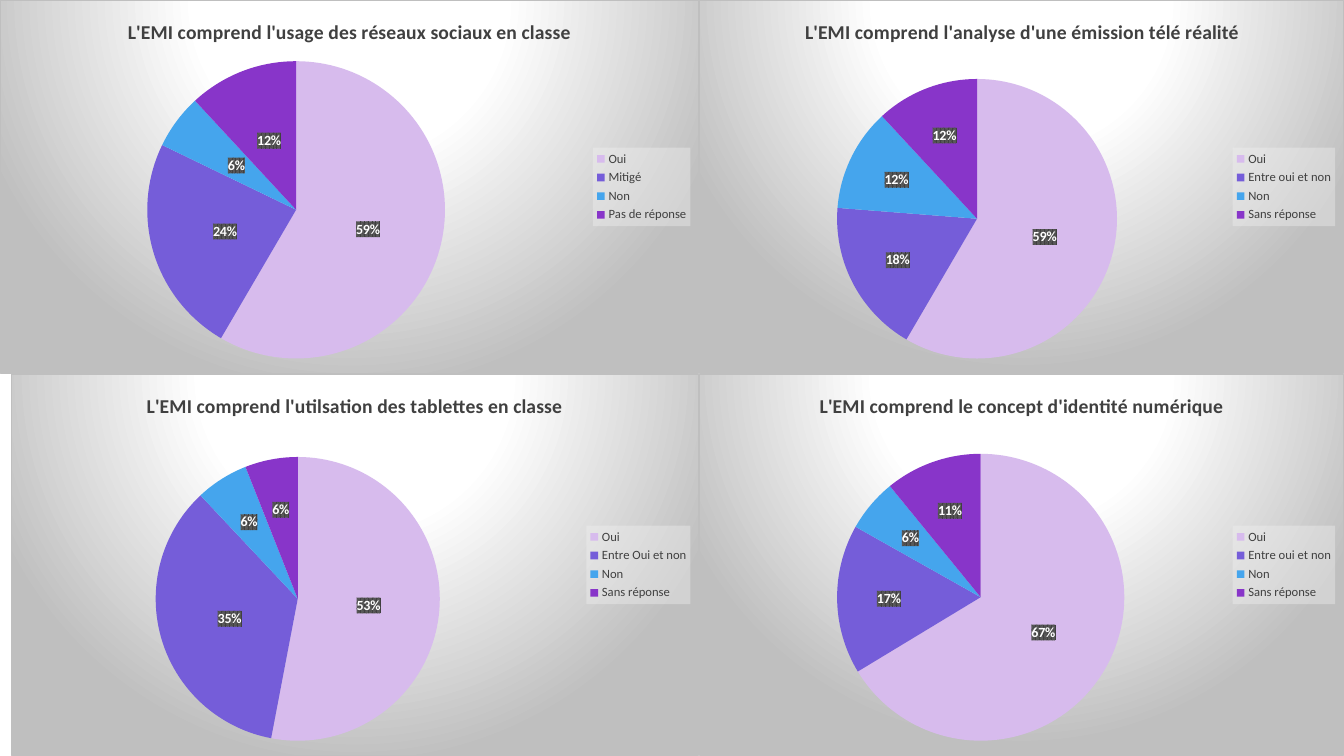
from dataclasses import dataclass
from math import cos, pi, sin
from typing import Any

from pptx import Presentation
from pptx import util as u
from pptx.chart import data as cd
from pptx.dml import color as col
from pptx.enum import chart as ch
from pptx.oxml import ns, parse_xml

PX = 9525
WIDE, HIGH = 1280, 720
LEFT, TOP = 666, 356


@dataclass(frozen=True)
class Theme:
    font: str = "Calibri"
    ink: str = "404040"
    edge: str = "BFBFBF"
    white: str = "FFFFFF"
    panel: str = "F2F2F2"
    weave: str = "595959"
    slices: tuple = ("D7BBED", "755DD9", "45A5ED", "8835C9")
    title: int = 14
    label: int = 10
    legend: int = 9


def style(font, theme, size, color, bold=False):
    font.name, font.size, font.bold = theme.font, u.Pt(size), bold
    font.color.rgb = col.RGBColor.from_string(color)


def write(frame, words, **form):
    frame.text = words
    style(frame.paragraphs[0].runs[0].font, **form)


def node(tag, inner):
    return parse_xml(f'<c:{tag} {ns.nsdecls("c", "a")}>{inner}</c:{tag}>')


def layout(**parts):
    inner = "".join(f'<c:{key} val="{val}"/>' for key, val in parts.items())
    return f"<c:layout><c:manualLayout>{inner}</c:manualLayout></c:layout>"


def place(parent, index, **parts):
    for old in parent.findall(ns.qn("c:layout")):
        parent.remove(old)
    parent.insert(index, parse_xml(layout(**parts).replace(
        "<c:layout>", f'<c:layout {ns.nsdecls("c")}>', 1)))


def paint(parent, inner):
    parent.find(ns.qn("c:txPr")).addprevious(node("spPr", inner))


def solid(color, alpha=100):
    return (f'<a:solidFill><a:srgbClr val="{color}"><a:alpha val="{alpha * 1000}"/>'
            '</a:srgbClr></a:solidFill>')


@dataclass
class Board:
    """Draws pie panels on one slide in a shared theme."""
    slide: Any
    theme: Theme

    def pie(self, box, title, start, disc, names, shares, moved):
        left, top, wide, high = box
        source = cd.CategoryChartData()
        source.categories = names
        source.add_series("Series 1", shares)
        chart = self.slide.shapes.add_chart(
            ch.XL_CHART_TYPE.PIE, *(n * PX for n in box), source).chart
        style(chart.font, self.theme, self.theme.label, "000000")
        self.panel(chart)
        self.title(chart, title, start / wide, 14 / high)
        self.legend(chart)
        x, y, size = disc
        area = chart._chartSpace.find(".//" + ns.qn("c:plotArea"))
        place(area, 0, layoutTarget="inner", xMode="edge", yMode="edge",
              x=x / wide, y=y / high, w=size / wide, h=size / high)
        plot = chart.plots[0]
        plot.vary_by_categories = True
        series = plot.series[0]
        for index, color in enumerate(self.theme.slices):
            form = series.points[index].format
            form.fill.solid()
            form.fill.fore_color.rgb = col.RGBColor.from_string(color)
            form.line.fill.background()
        self.labels(series, shares, moved, size / wide, size / high)

    def panel(self, chart):
        space, t = chart._chartSpace, self.theme
        if space.find(ns.qn("c:roundedCorners")) is None:
            corners = parse_xml(f'<c:roundedCorners {ns.nsdecls("c")} val="0"/>')
            space.find(ns.qn("c:chart")).addprevious(corners)
        stops = "".join(f'<a:gs pos="{at * 1000}"><a:srgbClr val="{color}"/></a:gs>'
                        for at, color in ((0, t.white), (39, t.white), (100, t.edge)))
        paint(space, f'<a:gradFill><a:gsLst>{stops}</a:gsLst><a:path path="circle">'
              '<a:fillToRect l="50000" t="-80000" r="50000" b="180000"/></a:path>'
              f'</a:gradFill><a:ln w="{u.Pt(0.75)}">{solid(t.edge)}</a:ln>')

    def title(self, chart, words, x, y):
        chart.has_title = True
        head = chart.chart_title
        write(head.text_frame, words, theme=self.theme, size=self.theme.title,
              color=self.theme.ink, bold=True)
        place(head._element, 1, xMode="edge", yMode="edge", x=x, y=y)

    def legend(self, chart):
        chart.has_legend = True
        key = chart.legend
        key.position = ch.XL_LEGEND_POSITION.RIGHT
        key.include_in_layout = False
        style(key.font, self.theme, self.theme.legend, self.theme.ink)
        paint(key._element, solid(self.theme.panel, 39))

    def labels(self, series, shares, moved, wide, high):
        t = self.theme
        shows = "".join(f'<c:show{name} val="{int(name == "Val")}"/>' for name in
                        ("LegendKey", "Val", "CatName", "SerName", "Percent", "BubbleSize"))
        body = (
            '<c:numFmt formatCode="0&quot;%&quot;" sourceLinked="0"/>'
            f'<c:spPr><a:pattFill prst="pct75"><a:fgClr><a:srgbClr val="{t.ink}"/></a:fgClr>'
            f'<a:bgClr><a:srgbClr val="{t.weave}"/></a:bgClr></a:pattFill></c:spPr>'
            f'<c:txPr><a:bodyPr/><a:p><a:pPr><a:defRPr sz="{t.label * 100}" b="1">'
            f'{solid(t.white)}<a:latin typeface="{t.font}"/></a:defRPr></a:pPr>'
            f'<a:endParaRPr lang="fr-FR"/></a:p></c:txPr><c:dLblPos val="ctr"/>{shows}')
        points = ""
        for index in moved:
            turn = 2 * pi * (sum(shares[:index]) + shares[index] / 2) / sum(shares)
            shift = layout(x=round(0.07 * wide * sin(turn), 4),
                           y=round(-0.07 * high * cos(turn), 4))
            points += f'<c:dLbl><c:idx val="{index}"/>{shift}{body}</c:dLbl>'
        old = series.data_labels._element
        old.getparent().replace(old, node("dLbls", points + body))


def main():
    deck = Presentation()
    deck.slide_width, deck.slide_height = WIDE * PX, HIGH * PX
    board = Board(deck.slides.add_slide(deck.slide_layouts[6]), Theme())
    right, low = WIDE - LEFT, HIGH - TOP
    mixed = ("Oui", "Entre oui et non", "Non", "Sans réponse")
    board.pie((0, 0, LEFT, TOP), "L'EMI comprend l'usage des réseaux sociaux en classe",
              118, (140, 58, 284), ("Oui", "Mitigé", "Non", "Pas de réponse"),
              (59, 24, 6, 12), ())
    board.pie((10, TOP, LEFT - 10, low), "L'EMI comprend l'utilsation des tablettes en classe",
              126, (138, 79, 271), ("Oui", "Entre Oui et non", "Non", "Sans réponse"),
              (53, 35, 6, 6), (2, 3))
    board.pie((LEFT, 0, right, TOP), "L'EMI comprend l'analyse d'une émission télé réalité",
              97, (131, 75, 267), mixed, (59, 18, 12, 12), (1, 2, 3))
    board.pie((LEFT, TOP, right, low), "L'EMI comprend le concept d'identité numérique",
              111, (131, 76, 274), mixed, (67, 17, 6, 11), (1, 2, 3))
    deck.save("out.pptx")


if __name__ == "__main__":
    main()
